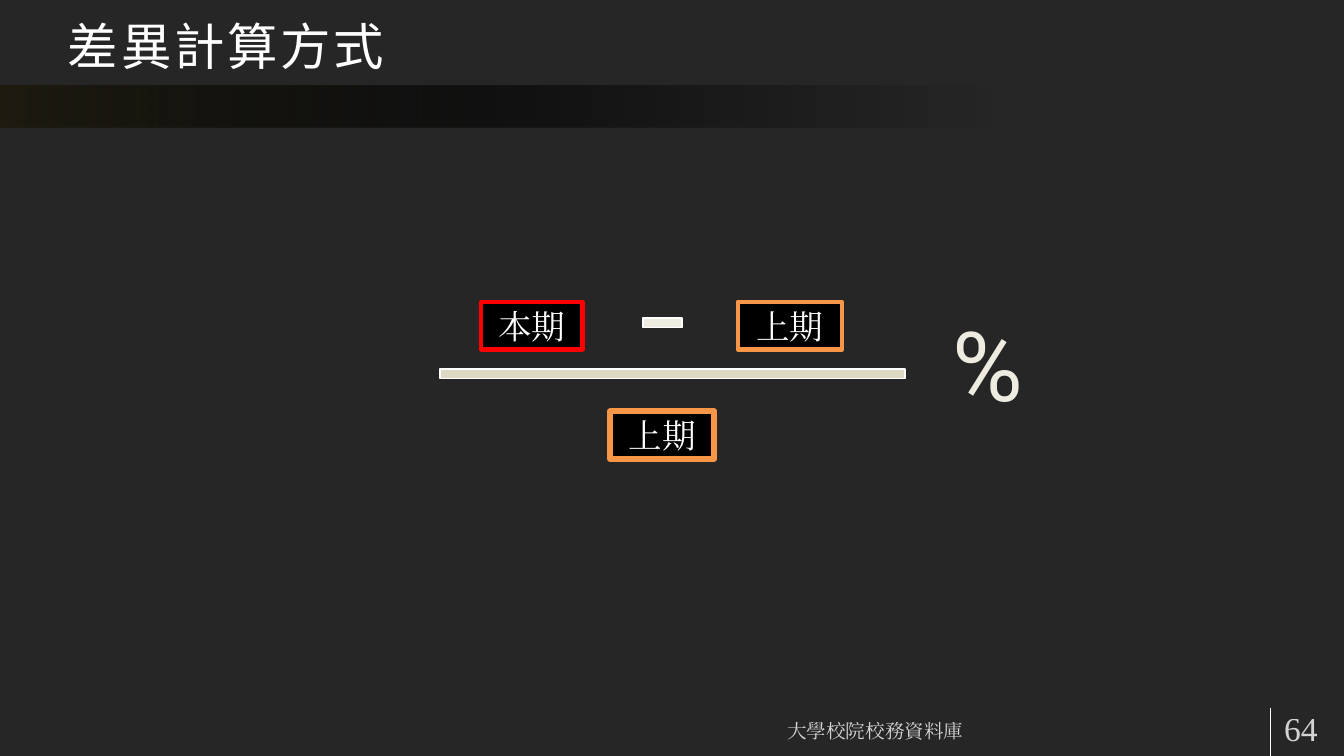
from lxml import etree
from pptx import Presentation, util as u
from pptx.dml.color import RGBColor
from pptx.enum import shapes, text
from pptx.oxml import parse_xml
from pptx.oxml.ns import nsdecls, qn

COLORS = {
    "bg": "262626", "white": "FFFFFF", "black": "000000", "band": "1E1C11",
    "current": "FF0000", "previous": "F79646", "cream": "EEECE1", "bar": "DDD9C3",
}
SANS, SERIF, LATIN = "Noto Sans CJK SC", "Times New Roman", "Roboto"
MIDDLE, BOTTOM, TOP = text.MSO_ANCHOR.MIDDLE, text.MSO_ANCHOR.BOTTOM, text.MSO_ANCHOR.TOP
LEFT, CENTER = text.PP_ALIGN.LEFT, text.PP_ALIGN.CENTER
RECT, MINUS = shapes.MSO_SHAPE.RECTANGLE, shapes.MSO_SHAPE.MATH_MINUS


def rgb(name):
    return RGBColor.from_string(COLORS[name])


class Deck:
    def __init__(self, width, height):
        self.prs = Presentation()
        self.prs.slide_width, self.prs.slide_height = u.Inches(width), u.Inches(height)
        self.s = self.prs.slides.add_slide(self.prs.slide_layouts[6])
        self.s.background.fill.solid()
        self.s.background.fill.fore_color.rgb = rgb("bg")

    def add_text(self, sp, words, size, font, color="white", align=LEFT, anchor=TOP,
                 inset=(0.1, 0.05), alpha=None, spacing=None):
        """Fill sp with one run; inset is (sides, top and bottom), alpha a percentage."""
        tf = sp.text_frame
        tf.word_wrap, tf.vertical_anchor = True, anchor
        tf.margin_left = tf.margin_right = u.Inches(inset[0])
        tf.margin_top = tf.margin_bottom = u.Inches(inset[1])
        p = tf.paragraphs[0]
        p.alignment = align
        r = p.add_run()
        r.text = words
        r.font.size, r.font.name = u.Pt(size), font
        r.font.color.rgb = rgb(color)
        rPr = r._r.get_or_add_rPr()
        ea = etree.Element(qn("a:ea"), typeface=font)
        rPr.find(qn("a:latin")).addnext(ea)
        if alpha:
            clr = rPr.find(".//" + qn("a:srgbClr"))
            etree.SubElement(clr, qn("a:alpha"), val=str(alpha * 1000))
        if spacing:
            rPr.set("spc", str(spacing * 100))

    def label(self, at, words, size, font, **style):
        sp = self.s.shapes.add_textbox(*map(u.Inches, at))
        self.add_text(sp, words, size, font, **style)

    def shape(self, kind, at, fill, line, weight):
        sp = self.s.shapes.add_shape(kind, *map(u.Inches, at))
        sp.shadow.inherit = False
        sp.fill.solid()
        sp.fill.fore_color.rgb = rgb(fill)
        sp.line.color.rgb = rgb(line)
        sp.line.width = u.Pt(weight)
        return sp

    def term(self, at, words, line, weight):
        """A black outlined box that names one term of the formula."""
        sp = self.shape(RECT, at, "black", line, weight)
        self.add_text(sp, words, 36, SERIF, align=CENTER, anchor=MIDDLE)

    def band(self, at, stops):
        """A borderless strip; stops are (position %, colour, opacity %)."""
        sp = self.s.shapes.add_shape(RECT, *map(u.Inches, at))
        sp.shadow.inherit = False
        sp.line.fill.background()
        sp.fill.gradient()
        sp.fill.gradient_angle = 0
        gs = "".join(
            f'<a:gs pos="{pos * 1000}"><a:srgbClr val="{COLORS[color]}">'
            f'<a:alpha val="{alpha * 1000}"/></a:srgbClr></a:gs>'
            for pos, color, alpha in stops)
        old = sp._element.spPr.find(".//" + qn("a:gsLst"))
        old.getparent().replace(old, parse_xml(f'<a:gsLst {nsdecls("a")}>{gs}</a:gsLst>'))

    def line(self, x1, y1, x2, y2, color, weight):
        c = self.s.shapes.add_connector(
            shapes.MSO_CONNECTOR.STRAIGHT, *map(u.Inches, (x1, y1, x2, y2)))
        c.line.color.rgb = rgb(color)
        c.line.width = u.Pt(weight)
        etree.SubElement(c._element.spPr, qn("a:effectLst"))


def main():
    d = Deck(20, 11.25)
    d.band((0, 1.27, 20, 0.63),
           [(0, "band", 100), (39, "black", 54), (74, "black", 0)])
    d.line(18.9, 10.54, 18.9, 11.25, "white", 0.75)
    d.label((0.86, 0, 18, 1.35), "差異計算方式", 54, SANS,
            anchor=MIDDLE, inset=(0.15, 0.07), spacing=3)

    footer = dict(inset=(0.18, 0.09), alpha=80)
    d.label((7.16, 10.54, 11.73, 0.6), "大學校院校務資料庫", 21, SERIF,
            align=CENTER, anchor=BOTTOM, **footer)
    d.label((18.93, 10.54, 1.15, 0.6), "64", 36, SERIF, anchor=MIDDLE, **footer)

    top, height = 4.49, 0.71
    d.term((7.16, top, 1.51, height), "本期", "current", 4.5)
    d.shape(MINUS, (9.46, top, 0.79, 0.62), "cream", "white", 2)
    d.term((9.08, 6.12, 1.55, height), "上期", "previous", 6)
    d.shape(MINUS, (5.3, 5.25, 9.42, 0.62), "bar", "white", 2)
    d.term((10.98, top, 1.55, height), "上期", "previous", 4.5)
    d.label((14.08, top, 2.33, 1.84), "%", 103.5, LATIN, color="cream")
    d.prs.save("out.pptx")


if __name__ == "__main__":
    main()
